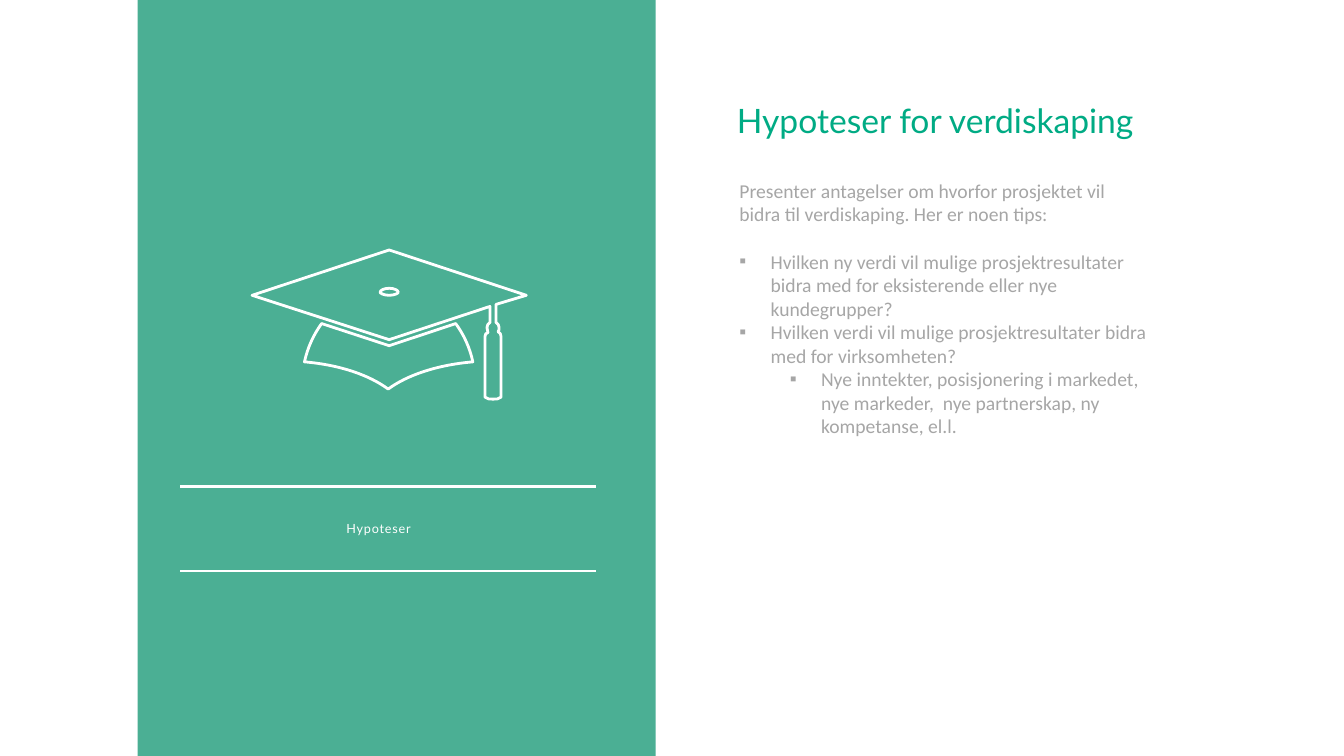
from lxml.etree import SubElement
from pptx import Presentation
from pptx.dml.color import RGBColor
from pptx.enum.shapes import MSO_CONNECTOR as Connector, MSO_SHAPE as Shape
from pptx.enum.text import MSO_ANCHOR as Anchor, MSO_AUTO_SIZE as AutoSize, PP_ALIGN as Align
from pptx.oxml.ns import qn
from pptx.util import Emu, Inches, Pt

COLORS = {"panel": "4BAF94", "title": "00AB84", "body": "A6A6A6", "white": "FFFFFF"}

presentation = Presentation()
presentation.slide_width, presentation.slide_height = Inches(13.33), Inches(7.5)
slide = presentation.slides.add_slide(presentation.slide_layouts[1])


def percent(*shares):
    """Turn alternating x and y percentages of the slide into lengths."""
    sides = (presentation.slide_width, presentation.slide_height)
    return [Emu(round(sides[i % 2] * share / 100)) for i, share in enumerate(shares)]


def write(paragraph, text, size, color, font="Lato", align=Align.LEFT, spacing=0,
          level=0, margin=0, hanging=0, bullet=None, after=0):
    run = paragraph.add_run()
    run.text = text
    run.font.name, run.font.size = font, Pt(size)
    run.font.color.rgb = RGBColor.from_string(COLORS[color])
    if spacing:
        run.font._element.set("spc", str(round(spacing * 100)))
    paragraph.alignment, paragraph.level = align, level
    paragraph.space_before, paragraph.space_after = Pt(0), Pt(after)
    properties = paragraph._p.get_or_add_pPr()
    properties.set("marL", str(Inches(margin)))
    properties.set("indent", str(-Inches(hanging)))
    if bullet:
        SubElement(properties, qn("a:buChar"), char=bullet)
    else:
        SubElement(properties, qn("a:buNone"))


# Green panel with two rules
panel = slide.shapes.add_shape(Shape.RECTANGLE, *percent(10.24, 0, 38.55, 100))
panel.shadow.inherit = False
panel.fill.solid()
panel.fill.fore_color.rgb = RGBColor.from_string(COLORS["panel"])
panel.line.fill.background()

for rule_y in (64.32, 75.54):
    rule = slide.shapes.add_connector(
        Connector.STRAIGHT, *percent(13.43, rule_y, 44.33, rule_y))
    rule.line.color.rgb = RGBColor.from_string(COLORS["white"])
    rule.line.width = Pt(2)
    SubElement(rule._element.spPr, qn("a:effectLst"))

# Graduation cap, in hundredths of an inch: two numbers make a line, six a curve
cap_contours = [
    [(386, 248), (250, 293), (386, 337), (486, 304), (486, 320),
     (484, 321, 483, 323, 483, 325), (483, 327, 483, 328, 484, 330),
     (482, 330, 481, 332, 481, 334), (481, 394),
     (483, 396, 486, 396, 489, 396), (492, 396, 495, 396, 497, 394),
     (497, 334), (497, 332, 496, 330, 494, 329),
     (495, 328, 495, 327, 495, 325), (495, 323, 494, 321, 492, 320),
     (492, 302), (522, 293)],
    [(386, 286), (391, 286, 395, 288, 395, 290), (395, 291, 391, 293, 386, 293),
     (381, 293, 377, 291, 377, 290), (377, 288, 381, 286, 386, 286)],
    [(452, 321), (386, 343), (319, 321), (311, 332, 305, 345, 302, 359),
     (337, 362, 366, 372, 385, 386), (404, 372, 434, 362, 469, 359),
     (466, 345, 460, 332, 452, 321)],
]
CAP_LEFT, CAP_TOP = 250, 248
builder = slide.shapes.build_freeform(*cap_contours[0][0], scale=Inches(0.01))
for number, contour in enumerate(cap_contours):
    if number:
        builder.move_to(*contour[0])
    builder.add_line_segments([segment[-2:] for segment in contour[1:]], close=True)
cap = builder.convert_to_shape()

segments = [segment for contour in cap_contours for segment in contour[1:]]
for line, segment in zip(list(cap._element.iter(qn("a:lnTo"))), segments):
    if len(segment) == 6:
        curve = line.getparent().makeelement(qn("a:cubicBezTo"))
        for x, y in zip(segment[::2], segment[1::2]):
            SubElement(curve, qn("a:pt"), x=str(x - CAP_LEFT), y=str(y - CAP_TOP))
        line.getparent().replace(line, curve)

cap.shadow.inherit = False
cap.fill.background()
cap.line.color.rgb = RGBColor.from_string(COLORS["white"])
cap.line.width = Pt(2)

# Text frames
label = slide.shapes.add_textbox(*percent(15.75, 68.9, 24.83, 2))
title, body = slide.shapes.title, slide.placeholders[1]
title.left, title.top, title.width, title.height = percent(54.83, 13.2, 32.55, 9.07)
body.left, body.top, body.width, body.height = percent(54.79, 22.95, 30.9, 39.07)
for shape, inset_x, inset_y in ((label, 0, 0), (title, 0, 0), (body, 0.03, 0.05)):
    frame = shape.text_frame
    frame.word_wrap, frame.auto_size = True, AutoSize.NONE
    frame.vertical_anchor = Anchor.TOP
    frame.margin_left = frame.margin_right = Inches(inset_x)
    frame.margin_top = frame.margin_bottom = Inches(inset_y)

write(label.text_frame.paragraphs[0], "Hypoteser", 9, "white",
      align=Align.CENTER, spacing=0.6)
write(title.text_frame.paragraphs[0], "Hypoteser for verdiskaping", 24, "title")

body_style = {"size": 14, "color": "body", "font": "Calibri"}
write(body.text_frame.paragraphs[0],
      "Presenter antagelser om hvorfor prosjektet vil bidra til verdiskaping. "
      "Her er noen tips:", after=17, **body_style)
tips = [
    (0, "Hvilken ny verdi vil mulige prosjektresultater bidra med for "
        "eksisterende eller nye kundegrupper?"),
    (0, "Hvilken verdi vil mulige prosjektresultater bidra med for virksomheten?"),
    (1, "Nye inntekter, posisjonering i markedet, nye markeder,  nye partnerskap, "
        "ny kompetanse, el.l."),
]
for level, tip in tips:
    write(body.text_frame.add_paragraph(), tip, level=level, bullet="▪",
          margin=0.31 + 0.5 * level, hanging=0.31, **body_style)

presentation.save("out.pptx")
